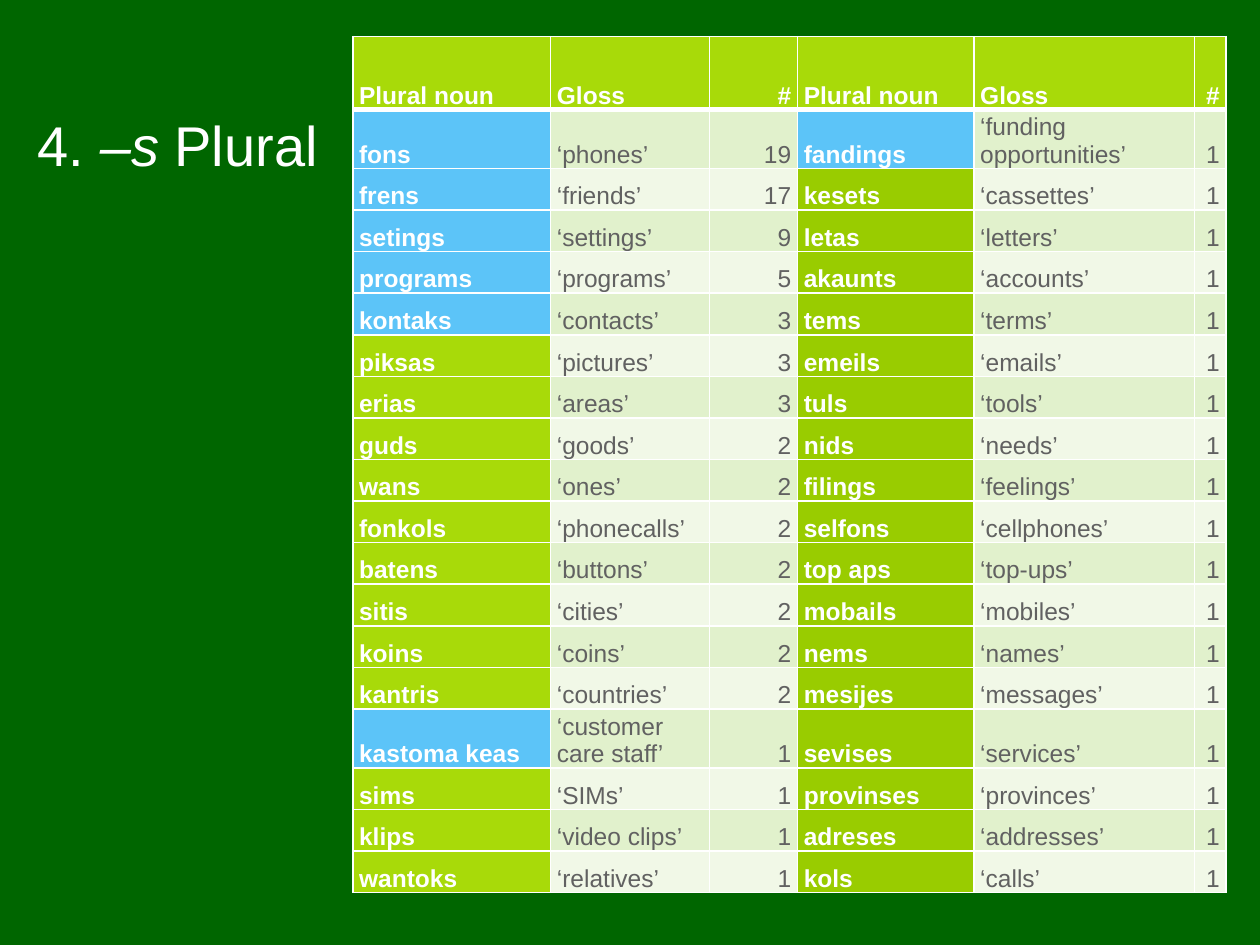
from lxml import etree
from pptx import Presentation, util as u
from pptx.dml.color import RGBColor
from pptx.enum import text
from pptx.oxml import ns

BACKGROUND = RGBColor(0x00, 0x66, 0x00)
WHITE = RGBColor(0xFF, 0xFF, 0xFF)
GREY = RGBColor(0x61, 0x61, 0x61)
LIME = RGBColor(0xA8, 0xDA, 0x09)
GREEN = RGBColor(0x99, 0xCC, 0x00)
BLUE = RGBColor(0x5C, 0xC4, 0xF8)
BANDS = (RGBColor(0xE1, 0xF1, 0xCC), RGBColor(0xF1, 0xF8, 0xE7))
FONT = "Arial"

HEADER = ("Plural noun", "Gloss", "#") * 2
COLUMN_WIDTHS = (1.57, 1.26, 0.7, 1.4, 1.75, 0.25)
HEADER_HEIGHT, ROW_HEIGHT, TALL_ROW_HEIGHT = 0.58, 0.33, 0.39
TALL_ROW = 15
NOUN_COLUMNS, COUNT_COLUMNS = (0, 3), (2, 5)
HIGHLIGHTED = {"fons", "frens", "setings", "programs", "kontaks",
               "kastoma keas", "fandings"}
PLURALS = [
    ("fons", "‘phones’", 19, "fandings", "‘funding opportunities’", 1),
    ("frens", "‘friends’", 17, "kesets", "‘cassettes’", 1),
    ("setings", "‘settings’", 9, "letas", "‘letters’", 1),
    ("programs", "‘programs’", 5, "akaunts", "‘accounts’", 1),
    ("kontaks", "‘contacts’", 3, "tems", "‘terms’", 1),
    ("piksas", "‘pictures’", 3, "emeils", "‘emails’", 1),
    ("erias", "‘areas’", 3, "tuls", "‘tools’", 1),
    ("guds", "‘goods’", 2, "nids", "‘needs’", 1),
    ("wans", "‘ones’", 2, "filings", "‘feelings’", 1),
    ("fonkols", "‘phonecalls’", 2, "selfons", "‘cellphones’", 1),
    ("batens", "‘buttons’", 2, "top aps", "‘top-ups’", 1),
    ("sitis", "‘cities’", 2, "mobails", "‘mobiles’", 1),
    ("koins", "‘coins’", 2, "nems", "‘names’", 1),
    ("kantris", "‘countries’", 2, "mesijes", "‘messages’", 1),
    ("kastoma keas", "‘customer care staff’", 1, "sevises", "‘services’", 1),
    ("sims", "‘SIMs’", 1, "provinses", "‘provinces’", 1),
    ("klips", "‘video clips’", 1, "adreses", "‘addresses’", 1),
    ("wantoks", "‘relatives’", 1, "kols", "‘calls’", 1),
]


def add_run(paragraph, wording, size, color, bold=False, italic=False):
    run = paragraph.add_run()
    run.text = wording
    font = run.font
    font.name, font.size, font.bold, font.italic = FONT, u.Pt(size), bold, italic
    font.color.rgb = color


def set_borders(cell, row):
    """White rules all round, with a heavy one under the header."""
    properties = cell._tc.get_or_add_tcPr()
    points = {"lnL": 1, "lnR": 1, "lnT": 3 if row == 1 else 1,
              "lnB": 3 if row == 0 else 1}
    for place, (side, width) in enumerate(points.items()):
        line = etree.Element(ns.qn(f"a:{side}"), w=str(u.Pt(width)))
        fill = etree.SubElement(line, ns.qn("a:solidFill"))
        etree.SubElement(fill, ns.qn("a:srgbClr"), val=str(WHITE))
        properties.insert(place, line)


def cell_fill(row, column, wording):
    if row == 0:
        return LIME
    if column not in NOUN_COLUMNS:
        return BANDS[(row - 1) % 2]
    if wording in HIGHLIGHTED:
        return BLUE
    return LIME if column == 0 else GREEN


def fill_cell(cell, row, column, wording):
    cell.fill.solid()
    cell.fill.fore_color.rgb = cell_fill(row, column, wording)
    set_borders(cell, row)
    cell.vertical_anchor = text.MSO_ANCHOR.BOTTOM
    cell.margin_left = cell.margin_right = u.Inches(0.05)
    cell.margin_top = cell.margin_bottom = 0
    paragraph = cell.text_frame.paragraphs[0]
    if column in COUNT_COLUMNS:
        paragraph.alignment = text.PP_ALIGN.RIGHT
    strong = row == 0 or column in NOUN_COLUMNS
    add_run(paragraph, wording, 14, WHITE if strong else GREY, bold=strong)


def add_title(slide, left, top, width, height):
    frame = slide.shapes.add_textbox(left, top, width, height).text_frame
    frame.word_wrap = True
    frame.vertical_anchor = text.MSO_ANCHOR.BOTTOM
    for wording, italic in (("4. ", False), ("–s", True), (" Plural", False)):
        add_run(frame.paragraphs[0], wording, 32, WHITE, italic=italic)


def add_plural_table(slide, left, top, width, height):
    rows = [HEADER, *PLURALS]
    table = slide.shapes.add_table(len(rows), len(HEADER),
                                   left, top, width, height).table
    table.horz_banding = False
    for column, share in zip(table.columns, COLUMN_WIDTHS):
        column.width = int(width * share / sum(COLUMN_WIDTHS))
    for r, values in enumerate(rows):
        special = {0: HEADER_HEIGHT, TALL_ROW: TALL_ROW_HEIGHT}
        table.rows[r].height = u.Inches(special.get(r, ROW_HEIGHT))
        for c, value in enumerate(values):
            fill_cell(table.cell(r, c), r, c, str(value))


def main():
    deck = Presentation()
    deck.slide_width, deck.slide_height = u.Inches(10), u.Inches(7.5)
    slide = deck.slides.add_slide(deck.slide_layouts[6])
    slide.background.fill.solid()
    slide.background.fill.fore_color.rgb = BACKGROUND

    # Heading at the left, word list at the right
    add_title(slide, *map(u.Inches, (0.2, 0.21, 2.99, 1.25)))
    add_plural_table(slide, *map(u.Inches, (2.8, 0.29, 6.93, 6.76)))
    deck.save("out.pptx")


if __name__ == "__main__":
    main()
